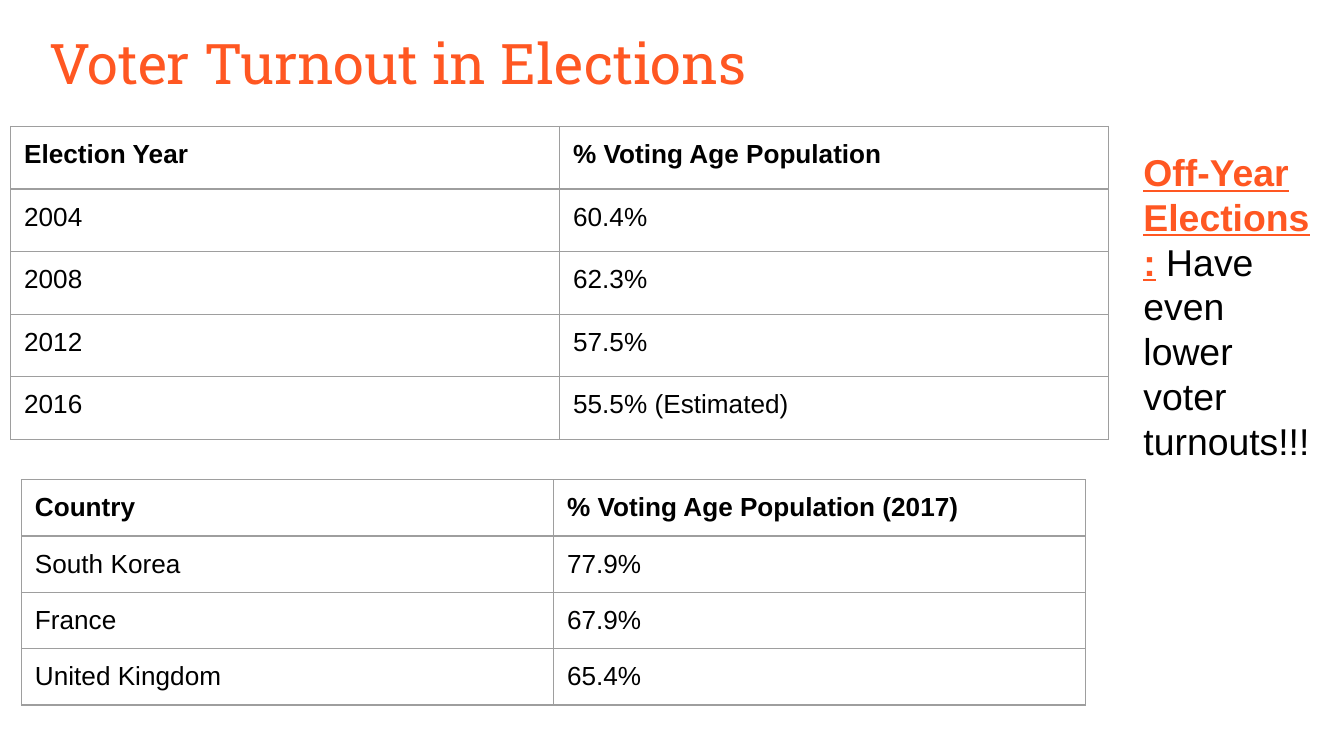
from lxml.etree import SubElement
from pptx import Presentation
from pptx.dml.color import RGBColor
from pptx.enum.text import MSO_ANCHOR, PP_ALIGN
from pptx.oxml.ns import qn
from pptx.util import Inches, Pt

ORANGE = RGBColor(0xFF, 0x57, 0x22)
BLACK = RGBColor(0, 0, 0)
GRAY = RGBColor(0x9E, 0x9E, 0x9E)
INSET = Inches(0.1)

TITLE = "Voter Turnout in Elections"
NOTE = [
    ("Off-Year Elections:", ORANGE, True),
    (" Have even lower voter turnouts!!!", BLACK, False),
]
TABLES = [
    {
        "left": 0.08, "top": 0.94, "width": 8.17, "height": 2.33,
        "rows": [
            ("Election Year", "% Voting Age Population"),
            ("2004", "60.4%"),
            ("2008", "62.3%"),
            ("2012", "57.5%"),
            ("2016", "55.5% (Estimated)"),
        ],
    },
    {
        "left": 0.16, "top": 3.57, "width": 7.92, "height": 1.67,
        "rows": [
            ("Country", "% Voting Age Population (2017)"),
            ("South Korea", "77.9%"),
            ("France", "67.9%"),
            ("United Kingdom", "65.4%"),
        ],
    },
]


def add_run(p, text, size, color, font="Arial", bold=False, underline=False):
    r = p.add_run()
    r.text = text
    r.font.name = font
    r.font.size = Pt(size)
    r.font.color.rgb = color
    r.font.bold = bold
    r.font.underline = underline


def set_frame(tf):
    tf.word_wrap = True
    tf.vertical_anchor = MSO_ANCHOR.TOP
    tf.margin_left = tf.margin_right = INSET
    tf.margin_top = tf.margin_bottom = INSET


def set_borders(cell):
    tc_pr = cell._tc.get_or_add_tcPr()
    for i, side in enumerate(("lnL", "lnR", "lnT", "lnB")):
        ln = tc_pr.makeelement(qn(f"a:{side}"), {"w": str(Pt(0.75))})
        tc_pr.insert(i, ln)
        fill = SubElement(ln, qn("a:solidFill"))
        SubElement(fill, qn("a:srgbClr"), val=str(GRAY))


def add_grid(s, left, top, width, height, rows):
    table = s.shapes.add_table(
        len(rows), len(rows[0]), Inches(left), Inches(top),
        Inches(width), Inches(height)).table
    table.horz_banding = False
    for i, values in enumerate(rows):
        for j, value in enumerate(values):
            cell = table.cell(i, j)
            cell.fill.background()
            cell.margin_left = cell.margin_right = INSET
            cell.margin_top = cell.margin_bottom = INSET
            set_borders(cell)
            add_run(cell.text_frame.paragraphs[0], value, 14, BLACK, bold=i == 0)


prs = Presentation()
prs.slide_width = Inches(10)
prs.slide_height = prs.slide_width * 9 // 16
s = prs.slides.add_slide(prs.slide_layouts[5])

title = s.shapes.title
title.left, title.top = Inches(0.27), Inches(0.11)
title.width, title.height = Inches(9.32), Inches(0.63)
set_frame(title.text_frame)
p = title.text_frame.paragraphs[0]
p.alignment = PP_ALIGN.LEFT
add_run(p, TITLE, 30, ORANGE, font="Roboto Slab")

for grid in TABLES:
    add_grid(s, **grid)

note = s.shapes.add_textbox(Inches(8.41), Inches(1.01), Inches(1.46), Inches(4.09))
set_frame(note.text_frame)
p = note.text_frame.paragraphs[0]
p.line_spacing = 1.0
for text, color, strong in NOTE:
    add_run(p, text, 20, color, bold=strong, underline=strong)

prs.save("out.pptx")
